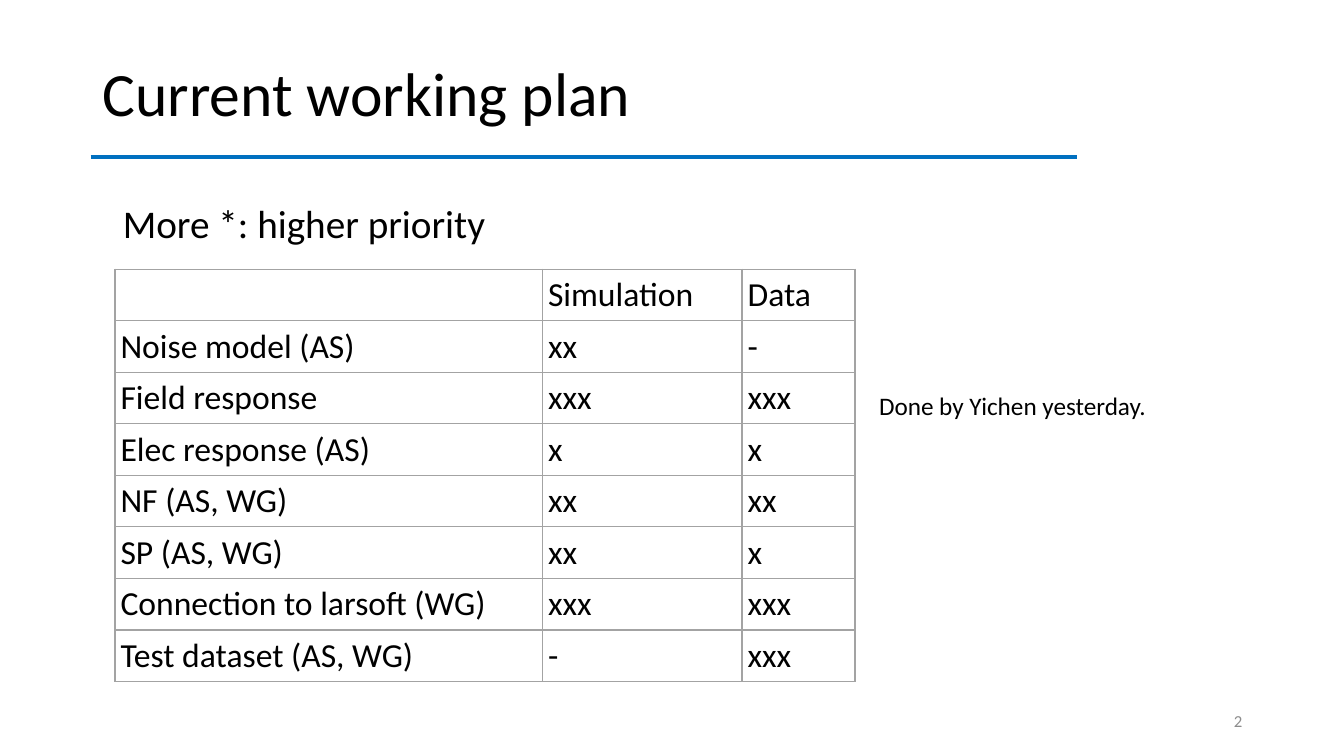
import lxml.etree
import pptx
import pptx.dml.color
import pptx.enum.shapes
import pptx.enum.text
import pptx.oxml.ns
import pptx.util

Inches = pptx.util.Inches
Align = pptx.enum.text.PP_ALIGN
Anchor = pptx.enum.text.MSO_ANCHOR


class Theme:
    font = "Calibri"
    ink, rule, gray, grid = "000000", "0070C0", "8C8C8C", "A3A3A3"
    title, lead, body, note, page = 44, 28, 24, 18, 12


PLAN = [
    ("", "Simulation", "Data"),
    ("Noise model (AS)", "xx", "-"),
    ("Field response", "xxx", "xxx"),
    ("Elec response (AS)", "x", "x"),
    ("NF (AS, WG)", "xx", "xx"),
    ("SP (AS, WG)", "xx", "x"),
    ("Connection to larsoft (WG)", "xxx", "xxx"),
    ("Test dataset (AS, WG)", "-", "xxx"),
]


class Deck:
    """Draws styled elements on the current slide."""

    def __init__(self, theme):
        self.theme = theme
        self.show = pptx.Presentation()
        self.show.slide_width = Inches(13.33)
        self.show.slide_height = Inches(7.5)
        self.slide = self.show.slides.add_slide(self.show.slide_layouts[6])

    def style(self, para, size, color):
        para.font.name = self.theme.font
        para.font.size = pptx.util.Pt(size)
        para.font.color.rgb = pptx.dml.color.RGBColor.from_string(color)
        for run in para.runs:
            run.font.name = self.theme.font
            run.font.size = para.font.size
            run.font.color.rgb = para.font.color.rgb

    def text(self, box, words, size, color=Theme.ink, anchor=Anchor.TOP, align=Align.LEFT):
        frame = self.slide.shapes.add_textbox(*map(Inches, box)).text_frame
        frame.word_wrap = True
        frame.vertical_anchor = anchor
        frame.text = words
        para = frame.paragraphs[0]
        para.alignment = align
        self.style(para, size, color)
        return para

    def line(self, left, right, top, color, width):
        kind = pptx.enum.shapes.MSO_CONNECTOR.STRAIGHT
        ends = map(Inches, (left, top, right, top))
        line = self.slide.shapes.add_connector(kind, *ends)
        line.line.color.rgb = pptx.dml.color.RGBColor.from_string(color)
        line.line.width = pptx.util.Pt(width)
        props = line._element.spPr
        lxml.etree.SubElement(props, pptx.oxml.ns.qn("a:effectLst"))

    def border(self, cell, color, width):
        props = cell._tc.get_or_add_tcPr()
        name = pptx.oxml.ns.qn
        for side in ("a:lnL", "a:lnR", "a:lnT", "a:lnB"):
            edge = lxml.etree.SubElement(props, name(side), w=str(pptx.util.Pt(width)))
            fill = lxml.etree.SubElement(edge, name("a:solidFill"))
            lxml.etree.SubElement(fill, name("a:srgbClr"), val=color)

    def table(self, left, top, widths, height, rows):
        size = (sum(widths), height * len(rows))
        place = map(Inches, (left, top, *size))
        table = self.slide.shapes.add_table(len(rows), len(widths), *place).table
        table.first_row = table.horz_banding = False
        for col, width in zip(table.columns, widths):
            col.width = Inches(width)
        for row, words in zip(table.rows, rows):
            row.height = Inches(height)
            for cell, word in zip(row.cells, words):
                self.border(cell, self.theme.grid, 1)
                cell.fill.background()
                cell.margin_left = cell.margin_right = Inches(4 / 72)
                cell.margin_top = cell.margin_bottom = Inches(4 / 72)
                cell.text = word
                self.style(cell.text_frame.paragraphs[0], self.theme.body, self.theme.ink)


def main():
    look = Theme()
    deck = Deck(look)
    deck.line(0.9, 10.68, 1.56, look.rule, 3)
    title = deck.text((0.92, 0.4, 11.5, 1.11), "Current working plan", look.title, anchor=Anchor.MIDDLE)
    title.line_spacing = 0.9
    deck.text((9.42, 6.95, 3, 0.4), "2", look.page, look.gray, Anchor.MIDDLE, Align.RIGHT)
    deck.table(1.14, 2.67, (4.24, 1.98, 1.12), 0.51, PLAN)
    deck.text((1.12, 1.93, 5.22, 0.57), "More *: higher priority", look.lead)
    deck.text((8.62, 3.82, 3.12, 0.4), "Done by Yichen yesterday.", look.note)
    deck.show.save("out.pptx")


if __name__ == "__main__":
    main()
